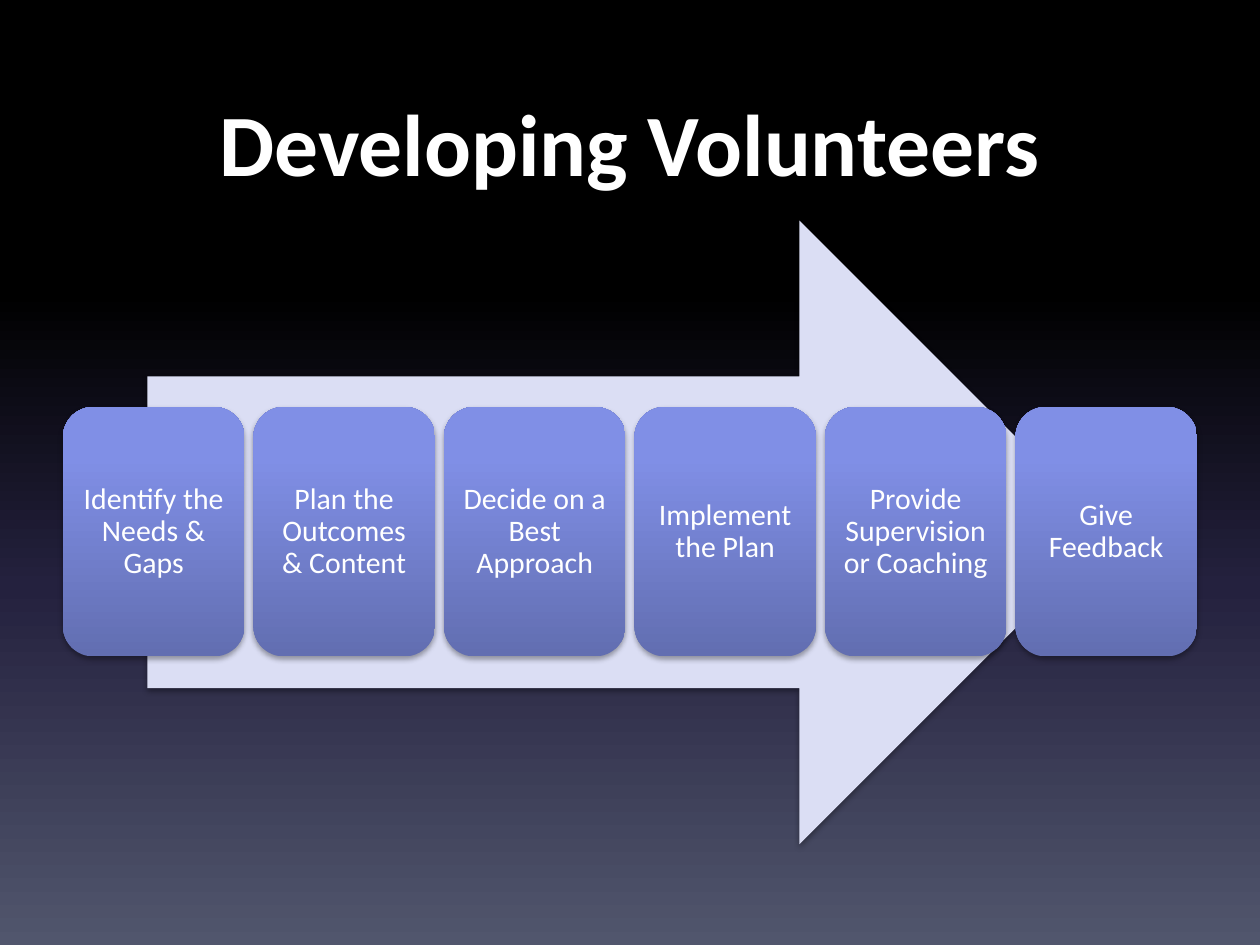
import pptx
import pptx.util
import pptx.oxml
import pptx.oxml.ns
import pptx.dml.color
import pptx.enum.shapes
import pptx.enum.text
from pptx.util import Inches

FONT = "Calibri"
COLORS = {
    "text": "FFFFFF",
    "arrow": "DBDEF4",
    "shadow": "000000",
}
BACKGROUND_STOPS = [(0, "000000"), (31, "000000"), (62, "24213E"), (100, "51566D")]
CARD_STOPS = [(0, "626EB1"), (80, "808FE6"), (100, "7E8EE9")]
STEPS = [
    "Identify the Needs & Gaps",
    "Plan the Outcomes & Content",
    "Decide on a Best Approach",
    "Implement the Plan",
    "Provide Supervision or Coaching",
    "Give Feedback",
]
CARD_LEFT, CARD_TOP, CARD_WIDTH, CARD_HEIGHT = 0.5, 3.23, 1.44, 1.98
CARDS_RIGHT = 9.5
NAMESPACE = pptx.oxml.ns.nsdecls("a")


def rgb(name):
    return pptx.dml.color.RGBColor.from_string(COLORS[name])


def set_gradient(fill, owner, stops, angle):
    fill.gradient()
    gradient = owner.find(".//" + pptx.oxml.ns.qn("a:gradFill"))
    for child in list(gradient):
        gradient.remove(child)
    marks = "".join(
        f'<a:gs pos="{position * 1000}"><a:srgbClr val="{color}"/></a:gs>'
        for position, color in stops
    )
    gradient.append(pptx.oxml.parse_xml(f"<a:gsLst {NAMESPACE}>{marks}</a:gsLst>"))
    gradient.append(
        pptx.oxml.parse_xml(f'<a:lin {NAMESPACE} ang="{angle * 60000}" scaled="0"/>')
    )


def add_shadow(shape):
    shape.shadow.inherit = False
    effects = shape._element.spPr.find(pptx.oxml.ns.qn("a:effectLst"))
    blur, distance = pptx.util.Pt(3.1), pptx.util.Pt(1.8)
    effects.append(pptx.oxml.parse_xml(
        f'<a:outerShdw {NAMESPACE} blurRad="{blur}" dist="{distance}" dir="5400000" '
        f'rotWithShape="0"><a:srgbClr val="{COLORS["shadow"]}">'
        '<a:alpha val="35000"/></a:srgbClr></a:outerShdw>'
    ))


def write_text(shape, text, size, bold=False):
    frame = shape.text_frame
    frame.text = text
    frame.word_wrap = True
    frame.vertical_anchor = pptx.enum.text.MSO_ANCHOR.MIDDLE
    para = frame.paragraphs[0]
    para.alignment = pptx.enum.text.PP_ALIGN.CENTER
    for span in para.runs:
        span.font.name = FONT
        span.font.size = pptx.util.Pt(size)
        span.font.bold = bold
        span.font.color.rgb = rgb("text")


def add_title(page, text):
    title = page.shapes.title
    title.left, title.top = Inches(0.5), Inches(0.5)
    title.width, title.height = Inches(9), Inches(1.25)
    write_text(title, text, 50, bold=True)


def add_arrow(page):
    arrow = page.shapes.add_shape(
        pptx.enum.shapes.MSO_SHAPE.RIGHT_ARROW,
        Inches(1.17), Inches(1.75), Inches(7.65), Inches(4.95),
    )
    arrow.fill.solid()
    arrow.fill.fore_color.rgb = rgb("arrow")
    arrow.line.fill.background()
    add_shadow(arrow)


def add_card(page, left, text):
    card = page.shapes.add_shape(
        pptx.enum.shapes.MSO_SHAPE.ROUNDED_RECTANGLE,
        Inches(left), Inches(CARD_TOP), Inches(CARD_WIDTH), Inches(CARD_HEIGHT),
    )
    set_gradient(card.fill, card._element.spPr, CARD_STOPS, 270)
    card.line.fill.background()
    add_shadow(card)
    write_text(card, text, 17)
    frame = card.text_frame
    frame.margin_left = frame.margin_right = Inches(0.07)
    frame.margin_top = frame.margin_bottom = Inches(0.07)
    frame.paragraphs[0].line_spacing = 0.9


def main():
    deck = pptx.Presentation()
    deck.slide_width, deck.slide_height = Inches(10), Inches(7.5)
    page = deck.slides.add_slide(deck.slide_layouts[5])
    set_gradient(page.background.fill, page._element, BACKGROUND_STOPS, 90)
    add_title(page, "Developing Volunteers")
    add_arrow(page)
    pitch = (CARDS_RIGHT - CARD_WIDTH - CARD_LEFT) / (len(STEPS) - 1)
    for index, step in enumerate(STEPS):
        add_card(page, CARD_LEFT + index * pitch, step)
    deck.save("out.pptx")


if __name__ == "__main__":
    main()
